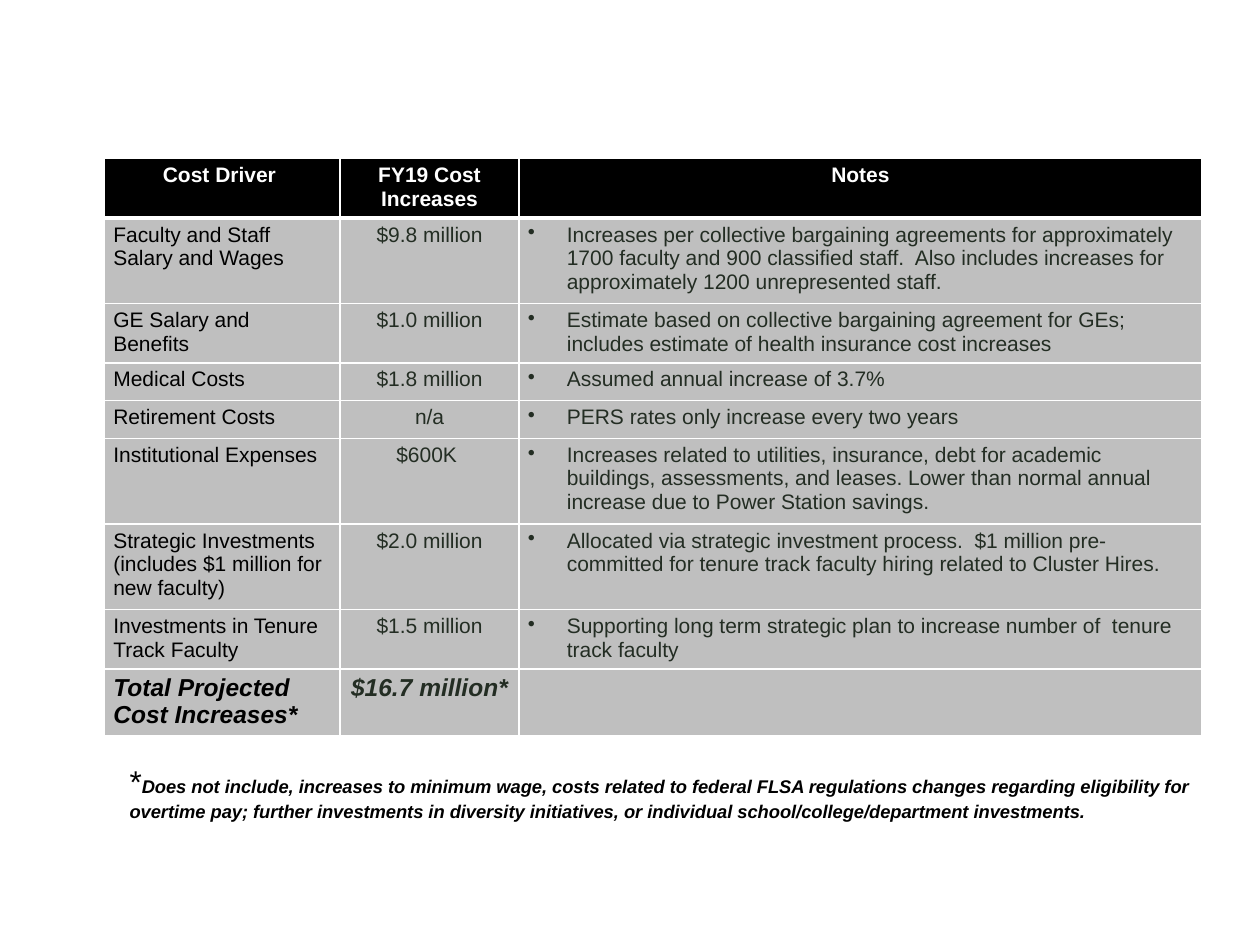
import pptx
import pptx.util
import pptx.dml.color
import pptx.enum.text
import pptx.oxml
import pptx.oxml.ns
from dataclasses import dataclass

Inches = pptx.util.Inches
Pt = pptx.util.Pt
ALIGN = pptx.enum.text.PP_ALIGN


@dataclass(frozen=True)
class Theme:
    font: str = "Arial"
    white: str = "FFFFFF"
    black: str = "000000"
    body: str = "232D23"
    band: str = "BFBFBF"
    text: float = 12
    total: float = 14
    note: float = 10.5
    star: float = 18
    rule: float = 1
    header_rule: float = 3


HEADERS = ["Cost Driver ", "FY19 Cost Increases", "Notes"]
COSTS = [
    ("Faculty and Staff Salary and Wages", "$9.8 million",
     "Increases per collective bargaining agreements for approximately 1700 faculty and 900 "
     "classified staff.  Also includes increases for approximately 1200 unrepresented staff."),
    ("GE Salary and Benefits", "$1.0 million",
     "Estimate based on collective bargaining agreement for GEs; "
     "includes estimate of health insurance cost increases"),
    ("Medical Costs", "$1.8 million", "Assumed annual increase of 3.7%"),
    ("Retirement Costs", "n/a", "PERS rates only increase every two years"),
    ("Institutional Expenses", "$600K ",
     "Increases related to utilities, insurance, debt for academic buildings, assessments, "
     "and leases. Lower than normal annual increase due to Power Station savings."),
    ("Strategic Investments (includes $1 million for new faculty)", "$2.0 million",
     "Allocated via strategic investment process.  $1 million pre-committed for "
     "tenure track faculty hiring related to Cluster Hires."),
    ("Investments in Tenure Track Faculty", "$1.5 million",
     "Supporting long term strategic plan to increase number of  tenure track faculty"),
]
TOTAL = ("Total Projected Cost Increases*", "$16.7 million*", "")
COL_WIDTHS = [1.87, 1.42, 5.42]
ROW_HEIGHTS = [0.47, 0.68, 0.47, 0.3, 0.3, 0.68, 0.68, 0.47, 0.53]
FOOTNOTE = (
    "Does not include, increases to minimum wage, costs related to federal FLSA regulations "
    "changes regarding eligibility for overtime pay; further investments in diversity "
    "initiatives, or individual school/college/department investments."
)


class SlideBuilder:
    def __init__(self, prs, theme):
        self.theme = theme
        self.s = prs.slides.add_slide(prs.slide_layouts[6])

    def run(self, p, text, color, size, bold=False, italic=False):
        r = p.add_run()
        r.text = text
        fmt = {"name": self.theme.font, "size": Pt(size), "bold": bold, "italic": italic}
        for name, value in fmt.items():
            setattr(r.font, name, value)
        r.font.color.rgb = pptx.dml.color.RGBColor.from_string(color)

    def bullet(self, p):
        pPr = p._p.get_or_add_pPr()
        indent = Inches(0.31)
        pPr.set("marL", str(indent))
        pPr.set("indent", str(-indent))
        pPr.append(pptx.oxml.parse_xml(
            f'<a:buChar {pptx.oxml.ns.nsdecls("a")} char="•"/>'))

    def borders(self, cell, top, bottom):
        t = self.theme
        widths = {"lnL": t.rule, "lnR": t.rule, "lnT": top, "lnB": bottom}
        tcPr = cell._tc.get_or_add_tcPr()
        for i, (tag, width) in enumerate(widths.items()):
            tcPr.insert(i, pptx.oxml.parse_xml(
                f'<a:{tag} {pptx.oxml.ns.nsdecls("a")} w="{Pt(width)}"><a:solidFill>'
                f'<a:srgbClr val="{t.white}"/></a:solidFill></a:{tag}>'))

    def cell(self, cell, text, fill, top, bottom, align, bulleted=False, **font):
        fmt = {"margin_left": Inches(0.07), "margin_right": Inches(0.07),
               "margin_top": Inches(0.04), "margin_bottom": Inches(0.04)}
        for name, value in fmt.items():
            setattr(cell, name, value)
        cell.fill.solid()
        cell.fill.fore_color.rgb = pptx.dml.color.RGBColor.from_string(fill)
        self.borders(cell, top, bottom)
        p = cell.text_frame.paragraphs[0]
        p.alignment = align
        if text:
            self.run(p, text, **font)
            if bulleted:
                self.bullet(p)

    def table(self, left, top, widths, heights, rows):
        t = self.theme
        sp = self.s.shapes.add_table(len(rows), len(widths), Inches(left), Inches(top),
                                     Inches(sum(widths)), Inches(sum(heights)))
        tbl = sp.table
        tbl.first_row = tbl.horz_banding = False
        for column, width in zip(tbl.columns, widths):
            column.width = Inches(width)
        for row, height in zip(tbl.rows, heights):
            row.height = Inches(height)
        last = len(rows) - 1
        for i, texts in enumerate(rows):
            header, total = i == 0, i == last
            for j, text in enumerate(texts):
                color = t.white if header else t.black if j == 0 else t.body
                self.cell(
                    tbl.cell(i, j), text,
                    fill=t.black if header else t.band,
                    top=t.header_rule if i == 1 else t.rule,
                    bottom=t.header_rule if header else t.rule,
                    align=ALIGN.CENTER if header or j == 1 else ALIGN.LEFT,
                    bulleted=j == 2 and not header,
                    color=color, size=t.total if total else t.text,
                    bold=header or total, italic=total)

    def footnote(self, left, top, width, height, text):
        t = self.theme
        tf = self.s.shapes.add_textbox(Inches(left), Inches(top),
                                       Inches(width), Inches(height)).text_frame
        tf.word_wrap = True
        tf.auto_size = pptx.enum.text.MSO_AUTO_SIZE.SHAPE_TO_FIT_TEXT
        p = tf.paragraphs[0]
        self.run(p, "*", t.black, t.star)
        self.run(p, text, t.black, t.note, bold=True, italic=True)


def main():
    prs = pptx.Presentation()
    prs.slide_width, prs.slide_height = Inches(10), Inches(7.5)
    slide = SlideBuilder(prs, Theme())
    slide.table(0.83, 1.26, COL_WIDTHS, ROW_HEIGHTS, [HEADERS, *COSTS, TOTAL])
    slide.footnote(0.93, 6, sum(COL_WIDTHS), 0.58, FOOTNOTE)
    prs.save("out.pptx")


if __name__ == "__main__":
    main()
